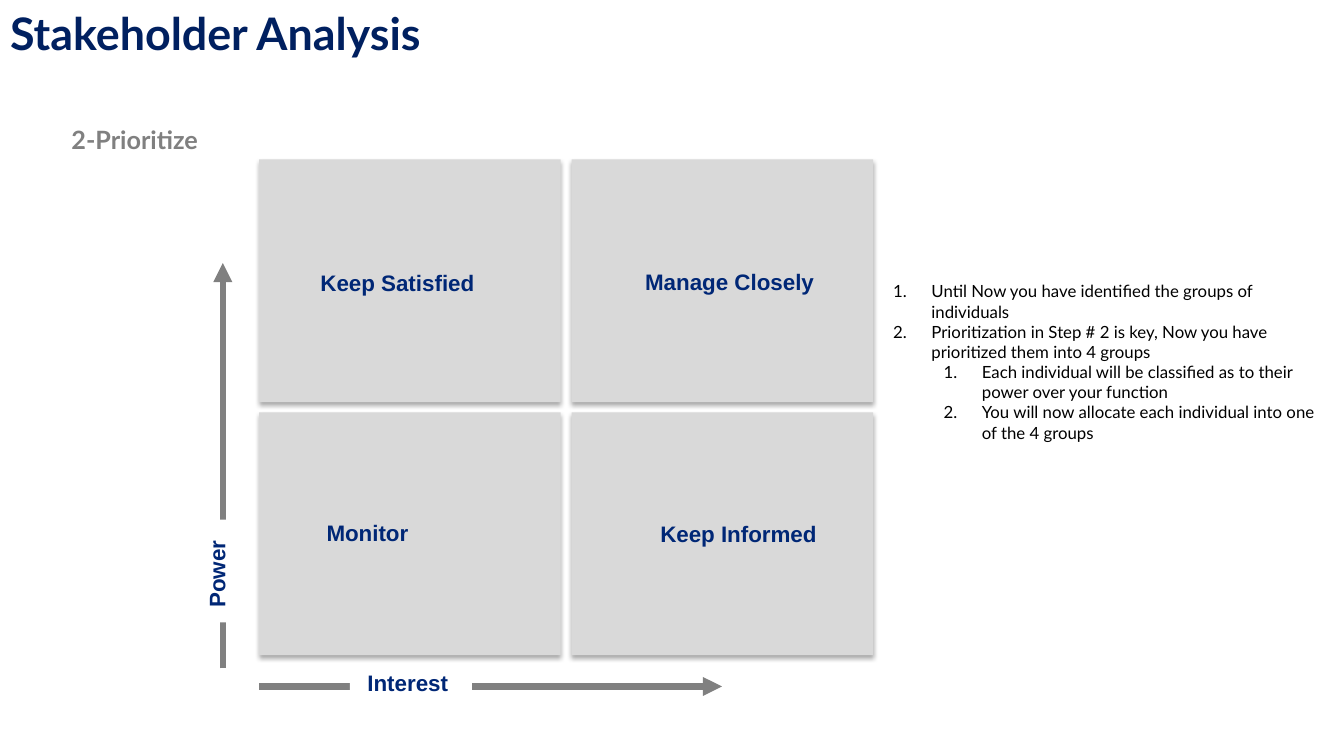
from lxml import etree
from pptx import Presentation
from pptx.dml.color import RGBColor
from pptx.enum.shapes import MSO_CONNECTOR, MSO_SHAPE
from pptx.enum.text import MSO_ANCHOR, MSO_AUTO_SIZE, PP_ALIGN
from pptx.oxml import parse_xml
from pptx.oxml.ns import nsdecls, qn
from pptx.util import Emu, Pt

PX = 9144  # 100 px to the inch
LEFT, CENTER = PP_ALIGN.LEFT, PP_ALIGN.CENTER
GREY, PANEL, NAVY = "808080", "D9D9D9", "002776"
SHADOW = (
    f'<a:effectLst {nsdecls("a")}><a:outerShdw blurRad="44450" dist="27940" '
    'dir="5400000" algn="ctr"><a:srgbClr val="000000"><a:alpha val="32000"/>'
    '</a:srgbClr></a:outerShdw></a:effectLst>'
)


def color(value):
    return RGBColor.from_string(value)


def write(shape, *lines, size=16, font="Arial", fill=NAVY, bold=True,
          align=LEFT, anchor=MSO_ANCHOR.TOP, levels=None):
    """Fill a shape with one paragraph per line; levels makes them a numbered list."""
    frame = shape.text_frame
    frame.word_wrap = True
    frame.auto_size = MSO_AUTO_SIZE.NONE
    frame.vertical_anchor = anchor
    for index, line in enumerate(lines):
        para = frame.paragraphs[0] if index == 0 else frame.add_paragraph()
        para.alignment = align
        if levels:
            para.level = levels[index]
            properties = para._p.get_or_add_pPr()
            properties.set("marL", str((38 + 50 * levels[index]) * PX))
            properties.set("indent", str(-38 * PX))
            etree.SubElement(properties, qn("a:buFont"), typeface="+mj-lt")
            etree.SubElement(properties, qn("a:buAutoNum"), type="arabicPeriod")
        span = para.add_run()
        span.text = line
        span.font.name, span.font.size, span.font.bold = font, Pt(size), bold
        span.font.color.rgb = color(fill)


deck = Presentation()
deck.slide_width, deck.slide_height = Emu(1333 * PX), Emu(750 * PX)
page = deck.slides.add_slide(deck.slide_layouts[5])
shapes = page.shapes

# Title and step heading
title = shapes.title
title.left, title.top, title.width, title.height = 0, 0, Emu(861 * PX), Emu(64 * PX)
write(title, "Stakeholder Analysis", size=32, font="Lato", fill="002060",
      anchor=MSO_ANCHOR.MIDDLE)
heading = shapes.add_textbox(61 * PX, 118 * PX, 361 * PX, 40 * PX)
write(heading, "2-Prioritize", size=18, font="Lato", fill=GREY)

# Axis arrows
for ends in [(221, 663, 221, 261), (257, 681, 716, 681)]:
    axis = shapes.add_connector(MSO_CONNECTOR.STRAIGHT, *[end * PX for end in ends])
    axis.line.color.rgb = color(GREY)
    axis.line.width = Pt(4.5)
    etree.SubElement(axis.line._get_or_add_ln(), qn("a:tailEnd"), type="triangle")
    etree.SubElement(axis._element.spPr, qn("a:effectLst"))

# Power and interest grid
for row in range(2):
    for column in range(2):
        quadrant = shapes.add_shape(
            MSO_SHAPE.RECTANGLE, (257 + 310 * column) * PX, (158 + 251 * row) * PX,
            299 * PX, 241 * PX)
        quadrant.fill.solid()
        quadrant.fill.fore_color.rgb = color(PANEL)
        quadrant.line.fill.background()
        quadrant._element.spPr.append(parse_xml(SHADOW))

for name, left, top, width in [
    ("Keep Satisfied", 308, 262, 254),
    ("Manage Closely", 630, 261, 235),
    ("Monitor", 314, 510, 235),
    ("Keep Informed", 645, 511, 221),
]:
    write(shapes.add_textbox(left * PX, top * PX, width * PX, 37 * PX), name)

# Axis names, set over the arrows
for name, left, top, width, turn in [
    ("Interest ", 347, 659, 121, 0),
    ("Power ", 164, 548, 102, 270),
]:
    label = shapes.add_shape(
        MSO_SHAPE.RECTANGLE, left * PX, top * PX, width * PX, 37 * PX)
    label.rotation = turn
    label.shadow.inherit = False
    label.fill.solid()
    label.fill.fore_color.rgb = color("FFFFFF")
    label.line.fill.background()
    write(label, name, align=CENTER)

# Numbered explanation
steps = shapes.add_textbox(876 * PX, 274 * PX, 448 * PX, 232 * PX)
write(
    steps,
    "Until Now you have identified the groups of individuals",
    "Prioritization in Step # 2 is key, Now you have prioritized them into 4 groups",
    "Each individual will be classified as to their power over your function",
    "You will now allocate each individual into one of the 4 groups",
    size=12, font="Lato", fill="000000", bold=False, levels=[0, 0, 1, 1],
)

deck.save("out.pptx")
